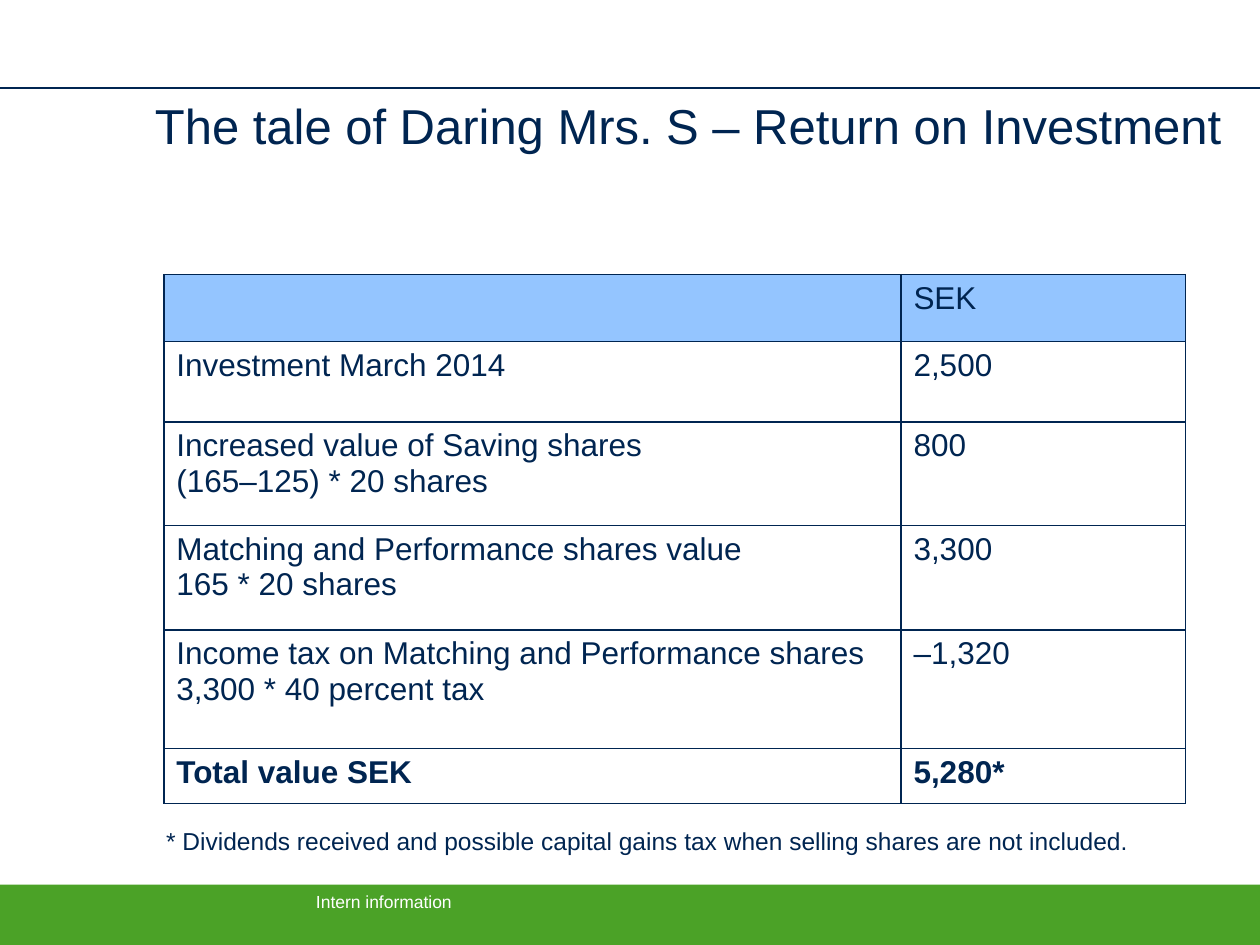
from dataclasses import dataclass

from lxml.etree import SubElement
from pptx import Presentation
from pptx.dml.color import RGBColor
from pptx.enum.shapes import MSO_CONNECTOR, MSO_SHAPE
from pptx.oxml.ns import qn
from pptx.util import Inches, Pt


@dataclass(frozen=True)
class Theme:
    font: str = "Arial"
    navy: str = "002551"
    green: str = "4BA227"
    sky: str = "94C5FF"
    white: str = "FFFFFF"
    title_size: int = 28
    table_size: int = 18
    note_size: int = 14
    footer_size: int = 10
    line_width: int = 1


THEME = Theme()
TITLE = "The tale of Daring Mrs. S – Return on Investment"
NOTE = "* Dividends received and possible capital gains tax when selling shares are not included."
FOOTER = "Intern information"
COLUMN_WIDTHS = [5.85, 2.26]
ROWS = [
    (0.53, "", "SEK"),
    (0.64, "Investment March 2014", "2,500"),
    (0.82, "Increased value of Saving shares\v(165–125) * 20 shares", "800"),
    (0.83, "Matching and Performance shares value\v165 * 20 shares", "3,300"),
    (0.94, "Income tax on Matching and Performance shares 3,300 * 40 percent tax", "–1,320"),
    (0.44, "Total value SEK", "5,280*"),
]


def style(para, size, color, bold=False):
    para.font.name = THEME.font
    para.font.size = Pt(size)
    para.font.bold = bold
    para.font.color.rgb = RGBColor.from_string(color)


def add_text(page, text, area, size, color, inset=0.1):
    box = page.shapes.add_textbox(*map(Inches, area))
    frame = box.text_frame
    frame.word_wrap = True
    frame.margin_left = frame.margin_right = Inches(inset)
    para = frame.paragraphs[0]
    para.text = text
    style(para, size, color)
    return para


def add_borders(cell):
    properties = cell._tc.get_or_add_tcPr()
    for position, side in enumerate(("lnL", "lnR", "lnT", "lnB")):
        line = properties.makeelement(qn(f"a:{side}"), {"w": str(Pt(THEME.line_width))})
        fill = SubElement(line, qn("a:solidFill"))
        SubElement(fill, qn("a:srgbClr"), val=THEME.navy)
        properties.insert(position, line)


def add_frame(page):
    band = page.shapes.add_shape(
        MSO_SHAPE.RECTANGLE, 0, Inches(7.02), Inches(10), Inches(0.48))
    band.shadow.inherit = False
    band.fill.solid()
    band.fill.fore_color.rgb = RGBColor.from_string(THEME.green)
    band.line.fill.background()
    add_text(page, FOOTER, (2.41, 7.02, 6.13, 0.27), THEME.footer_size, THEME.white)
    rule = page.shapes.add_connector(
        MSO_CONNECTOR.STRAIGHT, 0, Inches(0.7), Inches(10), Inches(0.7))
    rule.line.color.rgb = RGBColor.from_string(THEME.navy)
    rule.line.width = Pt(THEME.line_width)
    SubElement(rule._element.spPr, qn("a:effectLst"))


def add_returns_table(page):
    height = sum(row[0] for row in ROWS)
    table = page.shapes.add_table(
        len(ROWS), len(COLUMN_WIDTHS), Inches(1.3), Inches(2.18),
        Inches(sum(COLUMN_WIDTHS)), Inches(height)).table
    for column, width in zip(table.columns, COLUMN_WIDTHS):
        column.width = Inches(width)
    for index, (row_height, *texts) in enumerate(ROWS):
        table.rows[index].height = Inches(row_height)
        for cell, text in zip(table.rows[index].cells, texts):
            cell.fill.solid()
            color = THEME.sky if index == 0 else THEME.white
            cell.fill.fore_color.rgb = RGBColor.from_string(color)
            add_borders(cell)
            para = cell.text_frame.paragraphs[0]
            para.text = text
            style(para, THEME.table_size, THEME.navy, index == len(ROWS) - 1)


def main():
    deck = Presentation()
    deck.slide_width, deck.slide_height = Inches(10), Inches(7.5)
    page = deck.slides.add_slide(deck.slide_layouts[6])
    add_frame(page)
    title = add_text(page, TITLE, (1.18, 0.76, 8.82, 0.95),
                     THEME.title_size, THEME.navy, inset=0.05)
    title.line_spacing = 0.9
    add_returns_table(page)
    add_text(page, NOTE, (1.22, 6.51, 7.87, 0.34), THEME.note_size, THEME.navy)
    deck.save("out.pptx")


if __name__ == "__main__":
    main()
